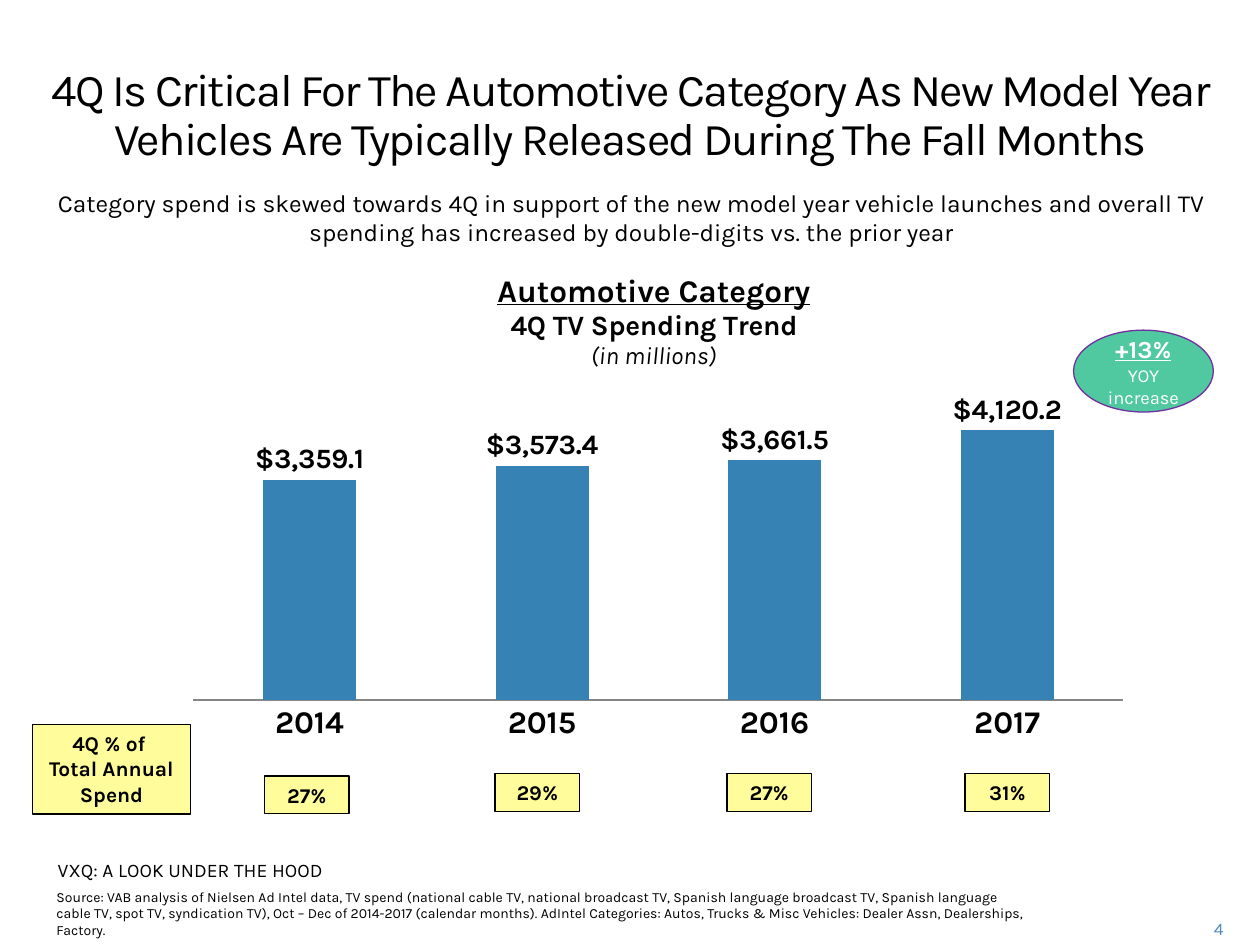
from dataclasses import dataclass

from lxml import etree
from pptx import Presentation
from pptx import util as u
from pptx.chart.data import CategoryChartData
from pptx.dml.color import RGBColor
from pptx.enum import chart as ch, shapes, text
from pptx.oxml import parse_xml
from pptx.oxml.ns import nsdecls


@dataclass(frozen=True)
class Theme:
    font: str = "Karla"
    black: str = "000000"
    white: str = "FFFFFF"
    bar: str = "3682B4"
    axis: str = "868686"
    note: str = "FFFD9B"
    badge: str = "50C8A0"
    badge_line: str = "7030A0"
    page: str = "508ABA"
    title: float = 26
    chart: float = 18
    value: float = 16
    body: float = 14
    note_size: float = 12
    credit: float = 11
    badge_size: float = 10.5
    page_size: float = 10
    source: float = 8


T = Theme()
CENTER = text.PP_ALIGN.CENTER


def inches(box):
    return [u.Inches(v) for v in box]


def set_font(font, size, color=T.black, bold=False, italic=False, underline=False):
    font.name, font.size = T.font, u.Pt(size)
    font.bold, font.italic, font.underline = bold, italic, underline
    font.color.rgb = RGBColor.from_string(color)


def write(tf, content, align=None, spacing=None, anchor=text.MSO_ANCHOR.TOP,
          tracking=None, **fmt):
    """Fill tf with content: one string, or a list of (string, font format) lines."""
    tf.word_wrap = True
    tf.vertical_anchor = anchor
    lines = [(content, {})] if isinstance(content, str) else content
    for i, (line, own) in enumerate(lines):
        p = tf.add_paragraph() if i else tf.paragraphs[0]
        p.alignment = align
        p.line_spacing = spacing
        r = p.add_run()
        r.text = line
        set_font(r.font, **{**fmt, **own})
        if tracking:
            r.font._element.set("spc", str(tracking))


def add_text(s, box, content, **fmt):
    write(s.shapes.add_textbox(*inches(box)).text_frame, content, **fmt)


def add_panel(s, box, kind, fill, line, content, **fmt):
    sp = s.shapes.add_shape(kind, *inches(box))
    sp.shadow.inherit = False
    sp.fill.solid()
    sp.fill.fore_color.rgb = RGBColor.from_string(fill)
    sp.line.color.rgb = RGBColor.from_string(line)
    sp.line.width = u.Pt(0.75)
    write(sp.text_frame, content, align=CENTER, **fmt)


def place(parent, x, y, w=None, h=None):
    """Give a chart part a manual layout in fractions of the chart."""
    for old in parent.findall("{*}layout"):
        parent.remove(old)
    parts = [("xMode", "edge"), ("yMode", "edge"), ("x", x), ("y", y)]
    if w:
        parts = [("layoutTarget", "inner")] + parts + [("w", w), ("h", h)]
    inner = "".join(f'<c:{tag} val="{val}"/>' for tag, val in parts)
    layout = parse_xml(f"<c:layout {nsdecls('c')}><c:manualLayout>{inner}"
                       "</c:manualLayout></c:layout>")
    tx = parent.find("{*}tx")
    if tx is None:
        parent.insert(0, layout)
    else:
        tx.addnext(layout)


def add_spending_chart(s, box):
    data = CategoryChartData(number_format='"$"#,##0.0')
    data.categories = ["2014", "2015", "2016", "2017"]
    data.add_series("Series 1", [3359.1, 3573.4, 3661.5, 4120.2])
    chart = s.shapes.add_chart(ch.XL_CHART_TYPE.COLUMN_CLUSTERED, *inches(box), data).chart
    set_font(chart.font, T.chart)
    chart.has_legend = False

    write(chart.chart_title.text_frame, [
        ("Automotive Category", dict(size=T.chart, bold=True, underline=True)),
        ("4Q TV Spending Trend", dict(size=T.value, bold=True)),
        ("(in millions)", dict(size=T.body, italic=True)),
    ], align=CENTER)
    chart.chart_title.include_in_layout = False
    place(chart.chart_title._element, 0.33, 0.14)
    place(chart._chartSpace.chart.plotArea, 0.02, 0.38, 0.96, 0.51)

    plot = chart.plots[0]
    plot.gap_width, plot.overlap, plot.vary_by_categories = 150, -25, False
    bars = plot.series[0]
    bars.format.fill.solid()
    bars.format.fill.fore_color.rgb = RGBColor.from_string(T.bar)
    plot.has_data_labels = True
    labels = plot.data_labels
    labels.show_value = True
    labels.position = ch.XL_LABEL_POSITION.OUTSIDE_END
    labels.number_format, labels.number_format_is_linked = '"$"#,##0.0', False
    set_font(labels.font, T.value, bold=True)

    years, spend = chart.category_axis, chart.value_axis
    years.major_tick_mark = ch.XL_TICK_MARK.NONE
    years.format.line.color.rgb = RGBColor.from_string(T.axis)
    set_font(years.tick_labels.font, T.chart, bold=True)
    spend.minimum_scale, spend.maximum_scale = 0, 4500
    spend.has_major_gridlines = False
    spend.visible = False


def add_share_row(s, box):
    """Place the row label and the fourth-quarter share under each bar."""
    left, top, width, height = box
    style = dict(kind=shapes.MSO_SHAPE.RECTANGLE, fill=T.note, line=T.black,
                 size=T.note_size, bold=True)
    add_panel(s, (left, top, 1.25, height), content=[("4Q % of ", {}), ("Total Annual Spend", {})],
              **style)
    for x, y, share in [(1.84, 0.41, "27%"), (3.67, 0.39, "29%"),
                        (5.51, 0.39, "27%"), (7.4, 0.39, "31%")]:
        add_panel(s, (left + x, top + y, width - 7.4, 0.3), content=share, **style)


def add_growth_badge(s, box):
    add_panel(s, box, shapes.MSO_SHAPE.OVAL, T.badge, T.badge_line, [
        ("+13%", dict(size=T.body, bold=True, underline=True)),
        ("YOY increase", dict(size=T.badge_size)),
    ], color=T.white, anchor=text.MSO_ANCHOR.MIDDLE)


def add_heading(s, box):
    left, top, width, height = box
    add_text(s, (left, top, width, 0.77),
             "4Q Is Critical For The Automotive Category As New Model Year "
             "Vehicles Are Typically Released During The Fall Months",
             align=CENTER, spacing=u.Pt(28), tracking=-100, size=T.title)
    add_text(s, (left + 0.03, top + height - 0.57, width - 0.04, 0.57),
             "Category spend is skewed towards 4Q in support of the new model year vehicle "
             "launches and overall TV spending has increased by double-digits vs. the prior year",
             align=CENTER, size=T.body)


def add_footer(s, box):
    left, top, width, height = box
    add_text(s, (left + 0.01, top, 3.13, 0.47), "VXQ: A LOOK UNDER THE HOOD", size=T.credit)
    add_text(s, (left, top + 0.24, 7.94, 0.47),
             "Source: VAB analysis of Nielsen Ad Intel data, TV spend (national cable TV, "
             "national broadcast TV, Spanish language broadcast TV, Spanish language cable TV, "
             "spot TV, syndication TV), Oct – Dec of 2014-2017 (calendar months). AdIntel "
             "Categories: Autos, Trucks & Misc Vehicles: Dealer Assn, Dealerships, Factory.",
             size=T.source)
    add_text(s, (left + width - 0.61, top + height - 0.25, 0.61, 0.25), "4",
             align=text.PP_ALIGN.RIGHT, anchor=text.MSO_ANCHOR.MIDDLE,
             size=T.page_size, color=T.page)


def main():
    prs = Presentation()
    prs.slide_width, prs.slide_height = u.Inches(10), u.Inches(7.5)
    s = prs.slides.add_slide(prs.slide_layouts[6])
    add_heading(s, (0.19, 0.48, 9.63, 1.53))
    add_spending_chart(s, (1.38, 1.48, 7.69, 4.58))
    add_share_row(s, (0.26, 5.75, 8.07, 0.71))
    add_growth_badge(s, (8.52, 2.62, 1.11, 0.65))
    add_footer(s, (0.35, 6.76, 9.46, 0.73))
    prs.save("out.pptx")


if __name__ == "__main__":
    main()
